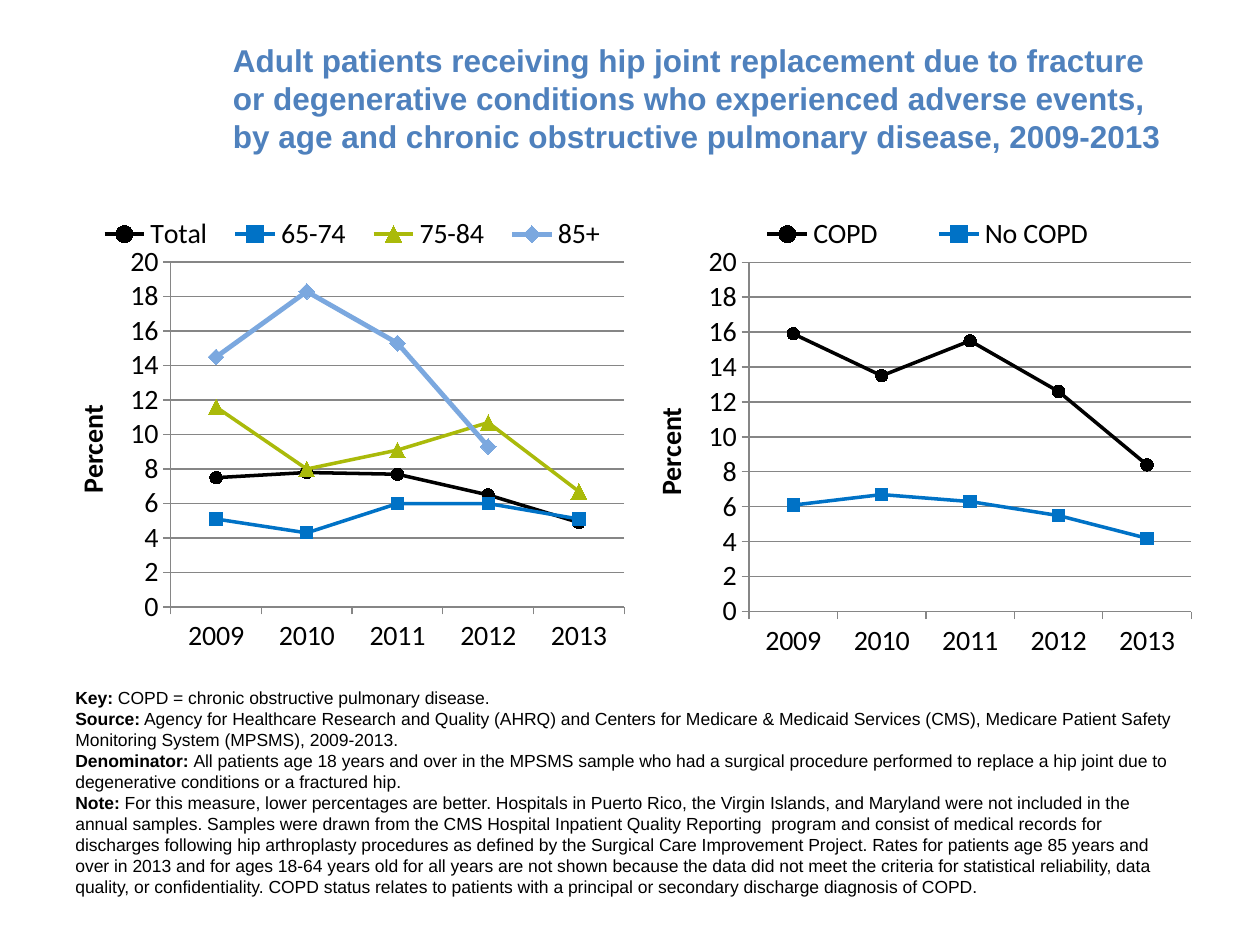
import pptx
import pptx.chart.data
import pptx.dml.color
import pptx.enum.chart
import pptx.enum.text
import pptx.oxml
import pptx.oxml.ns
import pptx.util
from dataclasses import dataclass

Pt = pptx.util.Pt
MARKER = pptx.enum.chart.XL_MARKER_STYLE


@dataclass(frozen=True)
class Theme:
    title: str = "4F81BD"
    text: str = "000000"
    grid: str = "868686"
    black: str = "000000"
    blue: str = "0072C6"
    green: str = "AABA0A"
    sky: str = "7BA8DF"
    text_font: str = "Arial"
    chart_font: str = "Calibri"
    title_size: int = 18
    chart_size: int = 16
    note_size: int = 10


THEME = Theme()

TITLE = ("Adult patients receiving hip joint replacement due to fracture or degenerative "
         "conditions who experienced adverse events, by age and chronic obstructive "
         "pulmonary disease, 2009-2013")
YEARS = ["2009", "2010", "2011", "2012", "2013"]

# Series: name, values, colour, line width, marker style, marker size
# Plot and legend areas: x, y, width, height as fractions of the chart
CHARTS = [
    {
        "plot": (0.19, 0.13, 0.8, 0.74),
        "legend": (0.04, 0.02, 0.94, 0.1),
        "series": [
            ("Total", [7.5, 7.8, 7.7, 6.5, 4.9], THEME.black, 2, MARKER.CIRCLE, 7),
            ("65-74", [5.1, 4.3, 6, 6, 5.1], THEME.blue, 2, MARKER.SQUARE, 7),
            ("75-84", [11.6, 8, 9.1, 10.7, 6.7], THEME.green, 2, MARKER.TRIANGLE, 9),
            ("85+", [14.5, 18.3, 15.3, 9.3, None], THEME.sky, 2.75, MARKER.DIAMOND, 9),
        ],
    },
    {
        "plot": (0.21, 0.13, 0.78, 0.75),
        "legend": (0.15, 0.02, 0.75, 0.1),
        "series": [
            ("COPD", [15.9, 13.5, 15.5, 12.6, 8.4], THEME.black, 2, MARKER.CIRCLE, 7),
            ("No COPD", [6.1, 6.7, 6.3, 5.5, 4.2], THEME.blue, 2, MARKER.SQUARE, 7),
        ],
    },
]

NOTES = [
    ("Key:", " COPD = chronic obstructive pulmonary disease."),
    ("Source:", " Agency for Healthcare Research and Quality (AHRQ) and Centers for Medicare & "
     "Medicaid Services (CMS), Medicare Patient Safety Monitoring System (MPSMS), 2009-2013."),
    ("Denominator: ", "All patients age 18 years and over in the MPSMS sample who had a surgical "
     "procedure performed to replace a hip joint due to degenerative conditions or a fractured "
     "hip."),
    ("Note: ", "For this measure, lower percentages are better. Hospitals in Puerto Rico, the "
     "Virgin Islands, and Maryland were not included in the annual samples. Samples were drawn "
     "from the CMS Hospital Inpatient Quality Reporting  program and consist of medical records "
     "for discharges following hip arthroplasty procedures as defined by the Surgical Care "
     "Improvement Project. Rates for patients age 85 years and over in 2013 and for ages 18-64 "
     "years old for all years are not shown because the data did not meet the criteria for "
     "statistical reliability, data quality, or confidentiality. COPD status relates to patients "
     "with a principal or secondary discharge diagnosis of COPD."),
]

MARGIN, CHART_TOP, CHART_WIDTH, CHART_HEIGHT = 36, 115.2, 324, 266.4


def rgb(colour):
    return pptx.dml.color.RGBColor.from_string(colour)


def style_font(font, size, face, colour=THEME.text, bold=False):
    font.size, font.name, font.bold = Pt(size), face, bold
    font.color.rgb = rgb(colour)


def add_text(slide, box, paragraphs, size, colour=THEME.text,
             anchor=pptx.enum.text.MSO_ANCHOR.TOP):
    """Each paragraph is a pair: a bold lead and the regular text after it."""
    frame = slide.shapes.add_textbox(*map(Pt, box)).text_frame
    frame.word_wrap = True
    frame.vertical_anchor = anchor
    for index, pieces in enumerate(paragraphs):
        paragraph = frame.paragraphs[0] if index == 0 else frame.add_paragraph()
        for piece, bold in zip(pieces, (True, False)):
            if piece:
                run = paragraph.add_run()
                run.text = piece
                style_font(run.font, size, THEME.text_font, colour, bold)


def layout_xml(area, inner=False):
    target = '<c:layoutTarget val="inner"/>' if inner else ""
    modes = "".join(f'<c:{side}Mode val="edge"/>' for side in "xy")
    sizes = "".join(f'<c:{side} val="{value}"/>' for side, value in zip("xywh", area))
    return pptx.oxml.parse_xml(
        f'<c:layout {pptx.oxml.ns.nsdecls("c")}><c:manualLayout>{target}{modes}{sizes}'
        "</c:manualLayout></c:layout>")


def place_plot(chart, area):
    plot_area = chart.element.find(".//" + pptx.oxml.ns.qn("c:plotArea"))
    for old in plot_area.findall(pptx.oxml.ns.qn("c:layout")):
        plot_area.remove(old)
    plot_area.insert(0, layout_xml(area, inner=True))


def place_legend(chart, area):
    legend = chart.element.find(".//" + pptx.oxml.ns.qn("c:legend"))
    for old in legend.findall(pptx.oxml.ns.qn("c:layout")):
        legend.remove(old)
    legend.find(pptx.oxml.ns.qn("c:legendPos")).addnext(layout_xml(area))


def style_axes(chart):
    years, percent = chart.category_axis, chart.value_axis
    for axis in (years, percent):
        style_font(axis.tick_labels.font, THEME.chart_size, THEME.chart_font)
        axis.major_tick_mark = pptx.enum.chart.XL_TICK_MARK.OUTSIDE
        axis.format.line.color.rgb = rgb(THEME.grid)
    percent.minimum_scale, percent.maximum_scale, percent.major_unit = 0, 20, 2
    percent.tick_labels.number_format = "0"
    percent.tick_labels.number_format_is_linked = False
    percent.has_major_gridlines = True
    percent.major_gridlines.format.line.color.rgb = rgb(THEME.grid)
    caption = percent.axis_title.text_frame
    caption.text = "Percent"
    style_font(caption.paragraphs[0].runs[0].font, THEME.chart_size, THEME.chart_font, bold=True)


def add_line_chart(slide, left, content):
    data = pptx.chart.data.CategoryChartData(number_format="0.0")
    data.categories = YEARS
    for name, values, *_ in content["series"]:
        data.add_series(name, values)
    chart = slide.shapes.add_chart(
        pptx.enum.chart.XL_CHART_TYPE.LINE_MARKERS,
        Pt(left), Pt(CHART_TOP), Pt(CHART_WIDTH), Pt(CHART_HEIGHT), data).chart
    style_font(chart.font, THEME.note_size, THEME.text_font)
    chart.has_title = False
    chart.has_legend = True
    chart.legend.position = pptx.enum.chart.XL_LEGEND_POSITION.TOP
    chart.legend.include_in_layout = False
    style_font(chart.legend.font, THEME.chart_size, THEME.chart_font)
    chart.plots[0].vary_by_categories = False
    for line, (_, _, colour, width, marker, marker_size) in zip(chart.plots[0].series,
                                                                content["series"]):
        line.smooth = False
        line.format.line.width = Pt(width)
        line.format.line.color.rgb = rgb(colour)
        line.marker.style, line.marker.size = marker, marker_size
        line.marker.format.fill.solid()
        line.marker.format.fill.fore_color.rgb = rgb(colour)
        line.marker.format.line.color.rgb = rgb(colour)
    style_axes(chart)
    place_plot(chart, content["plot"])
    place_legend(chart, content["legend"])


def main():
    deck = pptx.Presentation()
    deck.slide_width, deck.slide_height = Pt(720), Pt(540)
    slide = deck.slides.add_slide(deck.slide_layouts[6])
    add_text(slide, (126, 21.6, 558, 68.4), [(TITLE, "")], THEME.title_size,
             colour=THEME.title, anchor=pptx.enum.text.MSO_ANCHOR.MIDDLE)
    for column, content in enumerate(CHARTS):
        add_line_chart(slide, MARGIN + column * CHART_WIDTH, content)
    add_text(slide, (MARGIN, 388.8, 648, 128.2), NOTES, THEME.note_size)
    deck.save("out.pptx")


if __name__ == "__main__":
    main()
